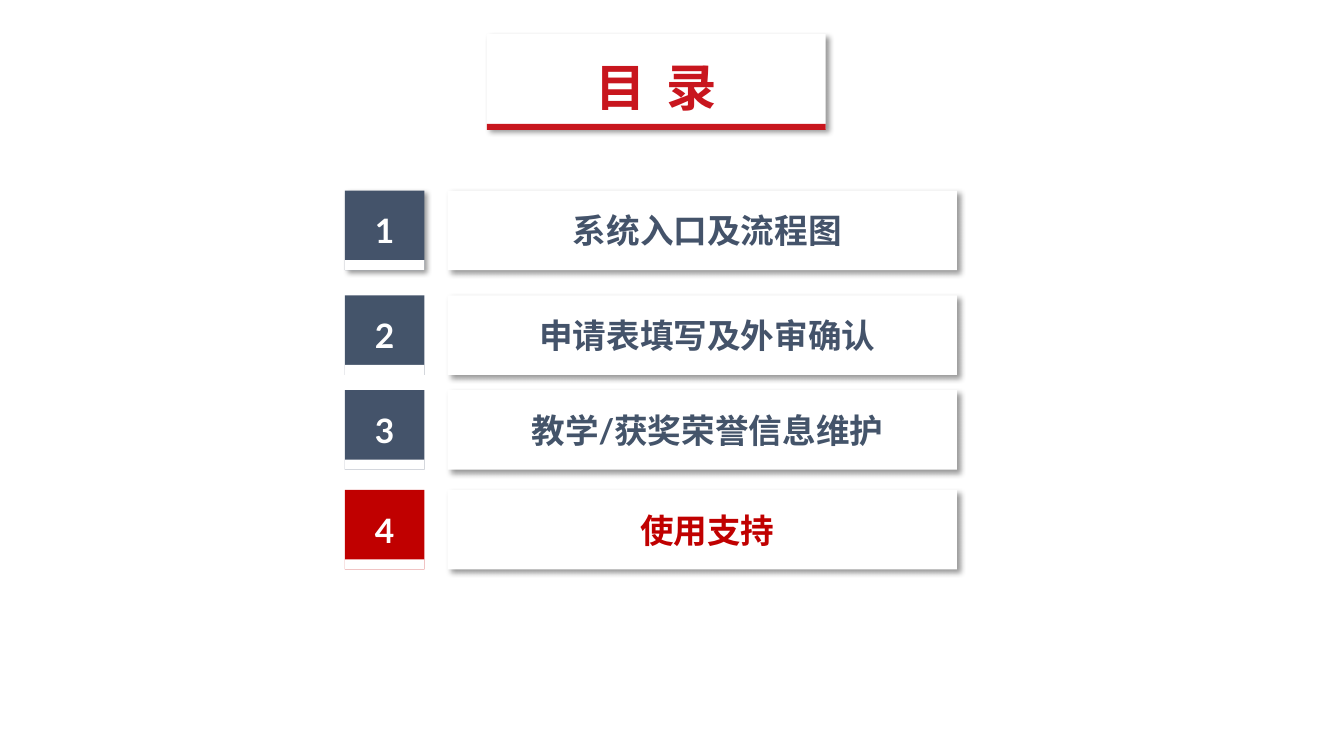
"""Build the contents slide: a title card above four numbered sections."""
import lxml.etree
import pptx
import pptx.dml.color
import pptx.enum.shapes
import pptx.enum.text
import pptx.oxml
import pptx.util

Inches = pptx.util.Inches
RED, WHITE, SLATE, SLATE_ALT = "C00000", "FFFFFF", "44536A", "44546A"
TITLE_RED = "C8161E"
SHADOW = (
    '<a:outerShdw xmlns:a="http://schemas.openxmlformats.org/drawingml/2006/main" '
    'blurRad="50800" dist="38100" dir="2700000" algn="tl" rotWithShape="0">'
    '<a:srgbClr val="000000"><a:alpha val="40000"/></a:srgbClr></a:outerShdw>'
)


def add_card(left, top, width, height, fill, shadow=False):
    card = slide.shapes.add_shape(
        pptx.enum.shapes.MSO_SHAPE.RECTANGLE,
        Inches(left), Inches(top), Inches(width), Inches(height))
    card.fill.solid()
    card.fill.fore_color.rgb = pptx.dml.color.RGBColor.from_string(fill)
    card.line.fill.background()
    card.shadow.inherit = False
    if shadow:
        effects = card._element.spPr.find(pptx.oxml.ns.qn("a:effectLst"))
        effects.append(lxml.etree.fromstring(SHADOW))
    return card


def write(shape, text, size, color):
    shape.text_frame.word_wrap = True
    paragraph = shape.text_frame.paragraphs[0]
    paragraph.text = text
    paragraph.alignment = pptx.enum.text.PP_ALIGN.CENTER
    paragraph.font.name = "Lato"
    paragraph.font.size = pptx.util.Pt(size)
    paragraph.font.bold = True
    paragraph.font.color.rgb = pptx.dml.color.RGBColor.from_string(color)
    return paragraph


presentation = pptx.Presentation()
presentation.slide_width = Inches(13.33)
presentation.slide_height = Inches(7.5)
slide = presentation.slides.add_slide(presentation.slide_layouts[6])

add_card(4.83, 0.34, 3.36, 0.94, WHITE, shadow=True)
title = slide.shapes.add_textbox(Inches(4.83), Inches(0.51), Inches(3.36), Inches(0.52))
heading = write(title, "目 录", 36, TITLE_RED)
heading.runs[0]._r.get_or_add_rPr().set("spc", "350")
title.text_frame.auto_size = pptx.enum.text.MSO_AUTO_SIZE.SHAPE_TO_FIT_TEXT
add_card(4.83, 1.23, 3.36, 0.06, TITLE_RED)

sections = [
    (1.89, "系统入口及流程图", SLATE, SLATE),
    (2.93, "申请表填写及外审确认", SLATE_ALT, SLATE),
    (3.87, "教学/获奖荣誉信息维护", SLATE, SLATE_ALT),
    (4.86, "使用支持", RED, RED),
]
for number, (top, name, number_fill, name_color) in enumerate(sections, start=1):
    number_card = add_card(3.42, top, 0.79, 0.79, number_fill, shadow=number == 1)
    write(number_card, str(number), 24, WHITE)
    add_card(3.42, top + 0.69, 0.79, 0.1, WHITE)
    name_card = add_card(4.44, top, 5.05, 0.79, WHITE, shadow=True)
    name_card.text_frame.margin_left = Inches(0.2)
    write(name_card, name, 24, name_color)

presentation.save("out.pptx")
